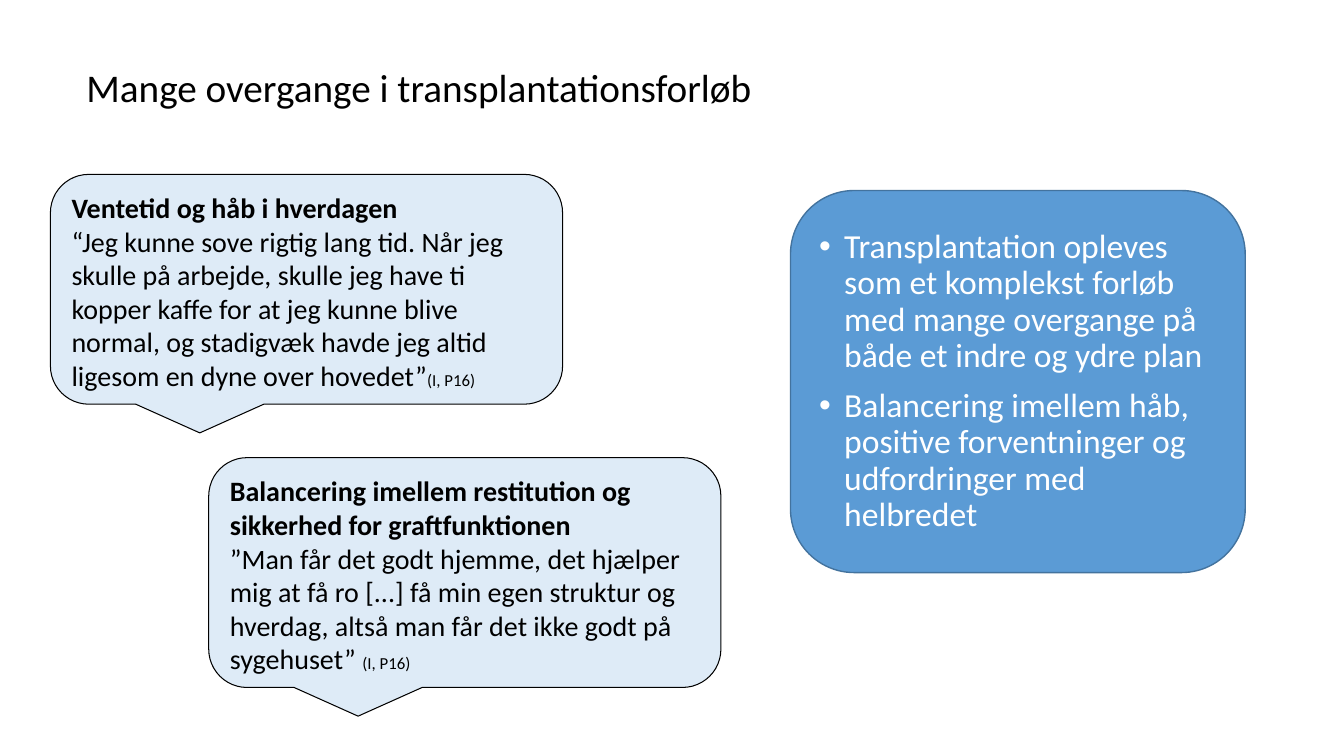
from dataclasses import dataclass

from lxml import etree
from pptx import Presentation
from pptx.dml.color import RGBColor
from pptx.enum.shapes import MSO_SHAPE
from pptx.enum.text import MSO_ANCHOR, PP_ALIGN
from pptx.oxml.ns import qn
from pptx.util import Inches, Pt

CALLOUT = MSO_SHAPE.ROUNDED_RECTANGULAR_CALLOUT
ROUNDED = MSO_SHAPE.ROUNDED_RECTANGLE
TOP, MIDDLE = MSO_ANCHOR.TOP, MSO_ANCHOR.MIDDLE
LEFT = PP_ALIGN.LEFT

TITLE = "Mange overgange i transplantationsforløb"
QUOTES = [
    (
        "Ventetid og håb i hverdagen",
        "“Jeg kunne sove rigtig lang tid. Når jeg skulle på arbejde, skulle jeg have ti "
        "kopper kaffe for at jeg kunne blive normal, og stadigvæk havde jeg altid "
        "ligesom en dyne over hovedet”",
        "(I, P16)",
    ),
    (
        "Balancering imellem restitution og sikkerhed for graftfunktionen",
        "”Man får det godt hjemme, det hjælper mig at få ro [...] få min egen struktur og "
        "hverdag, altså man får det ikke godt på sygehuset” ",
        "(I, P16)",
    ),
]
POINTS = [
    "Transplantation opleves som et komplekst forløb med mange overgange på både et "
    "indre og ydre plan",
    "Balancering imellem håb, positive forventninger og udfordringer med helbredet",
]


@dataclass(frozen=True)
class Theme:
    font: str = "Calibri"
    ink: str = "000000"
    quote_fill: str = "DEEBF7"
    panel_fill: str = "5B9BD5"
    panel_line: str = "43739E"
    panel_ink: str = "FFFFFF"
    title_size: int = 28
    point_size: int = 24
    quote_size: int = 20
    source_size: int = 12


THEME = Theme()
SLIDE_SIZE = (13.33, 7.5)
TITLE_BOX = (0.76, 0.17, 11.5, 1.45)
PANEL_BOX = (7.84, 1.89, 4.51, 3.79)
QUOTE_START = (0.5, 1.73)
QUOTE_STEP = (1.57, 2.81)
QUOTE_SIZE = (5.08, 2.28)
INDENT = 0.25


def color(value):
    return RGBColor.from_string(value)


def format_run(run, size, ink, bold=False):
    run.font.name = THEME.font
    run.font.size = Pt(size)
    run.font.bold = bold
    run.font.color.rgb = color(ink)


def add_panel(slide, kind, box, fill, line, line_width, anchor):
    shape = slide.shapes.add_shape(kind, *map(Inches, box))
    shape.shadow.inherit = False
    shape.fill.solid()
    shape.fill.fore_color.rgb = color(fill)
    shape.line.color.rgb = color(line)
    shape.line.width = Pt(line_width)
    shape.text_frame.word_wrap = True
    shape.text_frame.vertical_anchor = anchor
    return shape.text_frame


def add_title(slide):
    frame = slide.shapes.add_textbox(*map(Inches, TITLE_BOX)).text_frame
    frame.word_wrap = True
    frame.vertical_anchor = MIDDLE
    frame.text = TITLE
    paragraph = frame.paragraphs[0]
    paragraph.line_spacing = 0.9
    format_run(paragraph.runs[0], THEME.title_size, THEME.ink)


def add_quote(slide, index, heading, quote, source):
    corner = [start + index * step for start, step in zip(QUOTE_START, QUOTE_STEP)]
    frame = add_panel(
        slide, CALLOUT, (*corner, *QUOTE_SIZE), THEME.quote_fill, THEME.ink, 0.75, TOP
    )
    frame.text = f"{heading}\n{quote}"
    for paragraph, bold in zip(frame.paragraphs, (True, False)):
        paragraph.alignment = LEFT
        format_run(paragraph.runs[0], THEME.quote_size, THEME.ink, bold)
    source_run = frame.paragraphs[1].add_run()
    source_run.text = source
    format_run(source_run, THEME.source_size, THEME.ink)


def add_bullet(paragraph):
    properties = paragraph._p.get_or_add_pPr()
    properties.set("marL", str(Inches(INDENT)))
    properties.set("indent", str(-Inches(INDENT)))
    etree.SubElement(properties, qn("a:buFont")).set("typeface", "Arial")
    etree.SubElement(properties, qn("a:buChar")).set("char", "•")


def add_points(slide):
    frame = add_panel(
        slide, ROUNDED, PANEL_BOX, THEME.panel_fill, THEME.panel_line, 1, MIDDLE
    )
    frame.text = "\n".join(POINTS)
    for paragraph in frame.paragraphs:
        paragraph.alignment = LEFT
        paragraph.line_spacing = 0.9
        paragraph.space_before = Pt(10)
        add_bullet(paragraph)
        format_run(paragraph.runs[0], THEME.point_size, THEME.panel_ink)


def main():
    presentation = Presentation()
    presentation.slide_width, presentation.slide_height = map(Inches, SLIDE_SIZE)
    slide = presentation.slides.add_slide(presentation.slide_layouts[6])
    add_title(slide)
    for index, quote in enumerate(QUOTES):
        add_quote(slide, index, *quote)
    add_points(slide)
    presentation.save("out.pptx")


if __name__ == "__main__":
    main()
